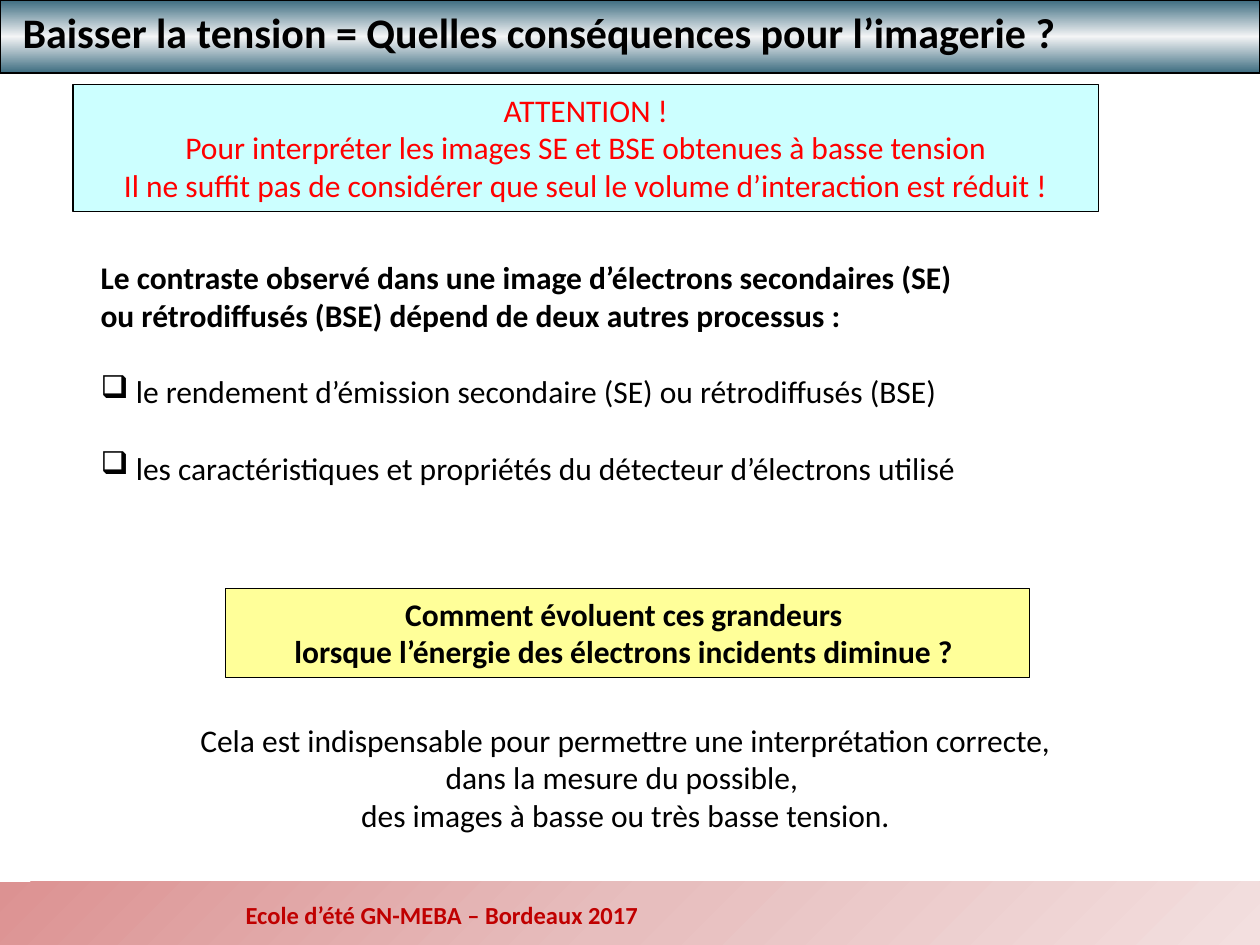
"""Build the slide on how lowering the voltage affects imaging."""
from dataclasses import dataclass
from typing import Optional

from lxml.etree import SubElement
from pptx import Presentation
from pptx.dml.color import RGBColor
from pptx.enum.shapes import MSO_SHAPE as Shape
from pptx.enum.text import MSO_ANCHOR as Anchor, MSO_AUTO_SIZE as AutoSize, PP_ALIGN as Align
from pptx.oxml.ns import qn
from pptx.util import Emu, Inches, Pt

WIDTH, HEIGHT = Inches(10), Inches(7.5)
FONT = "Calibri"
BULLET = "❑"
BULLET_INDENT = Inches(0.28)
BULLET_GAP = Pt(22)

BLACK = RGBColor(0x00, 0x00, 0x00)
RED = RGBColor(0xFF, 0x00, 0x00)
DARK_RED = RGBColor(0xC0, 0x00, 0x00)
PALE_CYAN = RGBColor(0xCC, 0xFF, 0xFF)
PALE_YELLOW = RGBColor(0xFF, 0xFF, 0x99)
STEEL = RGBColor(0x3D, 0x6C, 0x80)
SILVER = RGBColor(0xF4, 0xF5, 0xF6)
ROSE = RGBColor(0xDC, 0x92, 0x92)
MID_ROSE = RGBColor(0xE7, 0xBE, 0xBE)
PALE_ROSE = RGBColor(0xF3, 0xDF, 0xDF)


@dataclass(frozen=True)
class Area:
    """Position and size in percent of the slide."""
    left: float
    top: float
    width: float
    height: float

    def emu(self) -> tuple:
        return (Emu(round(WIDTH * self.left / 100)), Emu(round(HEIGHT * self.top / 100)),
                Emu(round(WIDTH * self.width / 100)), Emu(round(HEIGHT * self.height / 100)))


@dataclass(frozen=True)
class Band:
    """A bar with evenly spaced gradient colours."""
    area: Area
    colors: tuple
    angle: int
    outlined: bool = False


@dataclass(frozen=True)
class Line:
    """One paragraph of text."""
    text: str
    bold: bool = False
    bullet: bool = False


@dataclass(frozen=True)
class Block:
    """A text block, outlined when it has a fill."""
    area: Area
    lines: tuple
    size: int = 18
    color: RGBColor = BLACK
    align: Align = Align.CENTER
    fill: Optional[RGBColor] = None
    wrap: bool = True


FOOTER_BAND = Band(Area(0, 93.33, 100, 6.67), (ROSE, MID_ROSE, PALE_ROSE), 45)
TITLE_BAND = Band(Area(0, 0, 100, 7.73), (STEEL, SILVER, STEEL), 90, outlined=True)

TITLE = Block(Area(0.8, 0, 98.2, 6.67),
              (Line("Baisser la tension = Quelles conséquences pour l’imagerie ?", bold=True),),
              size=24, align=Align.LEFT)
BLOCKS = (
    Block(Area(18.5, 94.53, 33.8, 4.53),
          (Line("Ecole d’été GN-MEBA – Bordeaux 2017", bold=True),),
          size=14, color=DARK_RED, align=Align.LEFT, wrap=False),
    Block(Area(5.8, 8.93, 81.4, 13.47),
          (Line("ATTENTION !"),
           Line("Pour interpréter les images SE et BSE obtenues à basse tension"),
           Line("Il ne suffit pas de considérer que seul le volume d’interaction est réduit !")),
          color=RED, fill=PALE_CYAN),
    Block(Area(7, 26.67, 82.4, 25.33),
          (Line("Le contraste observé dans une image d’électrons secondaires (SE)", bold=True),
           Line("ou rétrodiffusés (BSE) dépend de deux autres processus :", bold=True),
           Line("le rendement d’émission secondaire (SE) ou rétrodiffusés (BSE)", bullet=True),
           Line("les caractéristiques et propriétés du détecteur d’électrons utilisé", bullet=True)),
          align=Align.LEFT),
    Block(Area(17.9, 62.27, 63.8, 9.47),
          (Line("Comment évoluent ces grandeurs ", bold=True),
           Line("lorsque l’énergie des électrons incidents diminue ? ", bold=True)),
          fill=PALE_YELLOW),
    Block(Area(13.3, 75.6, 72.7, 13.33),
          (Line("Cela est indispensable pour permettre une interprétation correcte, "
                "dans la mesure du possible, "),
           Line("des images à basse ou très basse tension."))),
)


def outline(sp) -> None:
    sp.line.color.rgb = BLACK
    sp.line.width = Pt(0.75)


def add_band(s, band: Band):
    sp = s.shapes.add_shape(Shape.RECTANGLE, *band.area.emu())
    sp.shadow.inherit = False
    sp.fill.gradient()
    sp.fill.gradient_angle = 360 - band.angle
    stops = sp.element.spPr.find(".//" + qn("a:gsLst"))
    stops.clear()
    for i, color in enumerate(band.colors):
        position = 100000 * i // (len(band.colors) - 1)
        stop = SubElement(stops, qn("a:gs"), pos=str(position))
        SubElement(stop, qn("a:srgbClr"), val=str(color))
    if band.outlined:
        outline(sp)
    else:
        sp.line.fill.background()
    return sp


def add_bullet(p) -> None:
    props = p._p.get_or_add_pPr()
    props.set("marL", str(BULLET_INDENT))
    props.set("indent", str(-BULLET_INDENT))
    p.space_before = BULLET_GAP
    SubElement(props, qn("a:buChar"), char=BULLET)


def write_text(tf, block: Block) -> None:
    tf.word_wrap = block.wrap
    tf.auto_size = AutoSize.NONE
    tf.vertical_anchor = Anchor.TOP
    for i, line in enumerate(block.lines):
        p = tf.add_paragraph() if i else tf.paragraphs[0]
        p.alignment = block.align
        if line.bullet:
            add_bullet(p)
        r = p.add_run()
        r.text = line.text
        r.font.name = FONT
        r.font.size = Pt(block.size)
        r.font.bold = line.bold
        r.font.color.rgb = block.color


def add_block(s, block: Block) -> None:
    if block.fill is None:
        sp = s.shapes.add_textbox(*block.area.emu())
    else:
        sp = s.shapes.add_shape(Shape.RECTANGLE, *block.area.emu())
        sp.shadow.inherit = False
        sp.fill.solid()
        sp.fill.fore_color.rgb = block.fill
        outline(sp)
    write_text(sp.text_frame, block)


def place_title(s, band) -> None:
    title = s.shapes.title
    title.left, title.top, title.width, title.height = TITLE.area.emu()
    write_text(title.text_frame, TITLE)
    band.element.addnext(title.element)


def main() -> None:
    prs = Presentation()
    prs.slide_width, prs.slide_height = WIDTH, HEIGHT
    s = prs.slides.add_slide(prs.slide_layouts.get_by_name("Title Only"))
    add_band(s, FOOTER_BAND)
    place_title(s, add_band(s, TITLE_BAND))
    for block in BLOCKS:
        add_block(s, block)
    prs.save("out.pptx")


if __name__ == "__main__":
    main()
